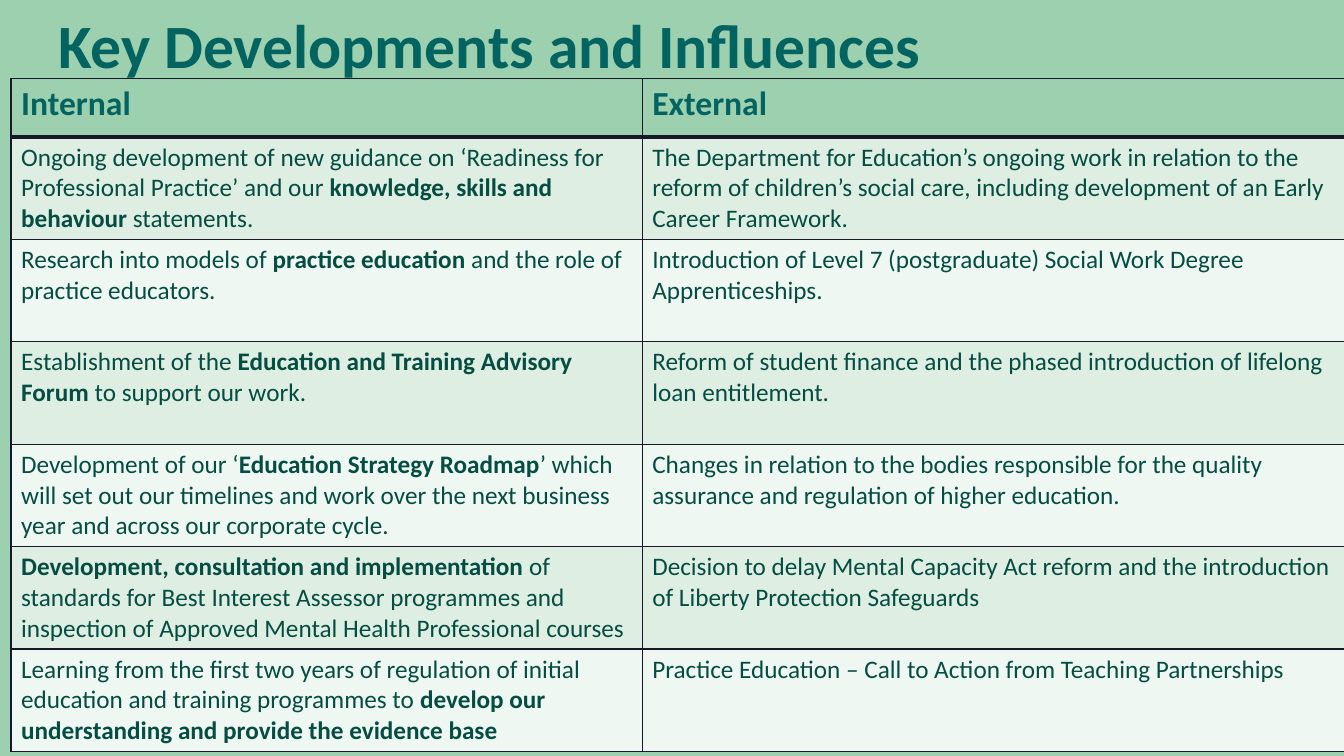
from lxml.etree import SubElement
from pptx import Presentation
from pptx.dml.color import RGBColor
from pptx.oxml.ns import qn
from pptx.util import Inches, Pt

TITLE = "Key Developments and Influences"
# Text between asterisks is bold.
ROWS = [
    ("*Internal*", "*External*"),
    ("Ongoing development of new guidance on ‘Readiness for Professional Practice’ "
     "and our *knowledge, skills and behaviour *statements.",
     "The Department for Education’s ongoing work in relation to the reform of "
     "children’s social care, including development of an Early Career Framework."),
    ("Research into models of *practice education *and the role of practice educators.",
     "Introduction of Level 7 (postgraduate) Social Work Degree Apprenticeships."),
    ("Establishment of the *Education and Training Advisory Forum* to support our work.",
     "Reform of student finance and the phased introduction of lifelong loan entitlement."),
    ("Development of our ‘*Education Strategy Roadmap*’ which will set out our "
     "timelines and work over the next business year and across our corporate cycle.",
     "Changes in relation to the bodies responsible for the quality assurance and "
     "regulation of higher education."),
    ("*Development, consultation and implementation *of standards for Best Interest "
     "Assessor programmes and inspection of Approved Mental Health Professional courses",
     "Decision to delay Mental Capacity Act reform and the introduction of Liberty "
     "Protection Safeguards"),
    ("Learning from the first two years of regulation of initial education and training "
     "programmes to *develop our understanding and provide the evidence base*",
     "Practice Education – Call to Action from Teaching Partnerships"),
]
WIDTHS = (6.26, 6.97)
HEAD, BODY = 0.58, 1.016
GREEN, TEAL, INK, LINE = "9DD0AE", "026461", "044D42", "19182B"
BANDS = ("EFF7F2", "DFEEE3")


def paint(fill, color):
    fill.solid()
    fill.fore_color.rgb = RGBColor.from_string(color)


def write(frame, text, size, color):
    """Fill the first paragraph, switching bold at each asterisk."""
    para = frame.paragraphs[0]
    for i, part in enumerate(text.split("*")):
        if part:
            run = para.add_run()
            run.text = part
            look = {"name": "Calibri", "size": Pt(size), "bold": i % 2 == 1}
            for key, value in look.items():
                setattr(run.font, key, value)
            paint(run.font.fill, color)
    return para


def edge(cell, row):
    """Draw the cell's borders, thick between header and body."""
    props = cell._tc.get_or_add_tcPr()
    thick = {0: "B", 1: "T"}.get(row)
    for side in "LRTB":
        width = Pt(3 if side == thick else 1)
        line = SubElement(props, qn(f"a:ln{side}"), w=str(width))
        solid = SubElement(line, qn("a:solidFill"))
        SubElement(solid, qn("a:srgbClr"), val=LINE)


deck = Presentation()
deck.slide_width, deck.slide_height = Inches(13.33), Inches(7.5)
slide = deck.slides.add_slide(deck.slide_layouts[6])
paint(slide.background.fill, GREEN)

box = slide.shapes.add_textbox(Inches(0.48), Inches(0.1), Inches(11.5), Inches(0.64))
box.text_frame.word_wrap = True
write(box.text_frame, f"*{TITLE}*", 44, TEAL).line_spacing = 0.9

high = HEAD + BODY * (len(ROWS) - 1)
table = slide.shapes.add_table(len(ROWS), len(WIDTHS), Inches(0.11), Inches(0.78),
                               Inches(sum(WIDTHS)), Inches(high)).table
for col, width in zip(table.columns, WIDTHS):
    col.width = Inches(width)
for r, texts in enumerate(ROWS):
    table.rows[r].height = Inches(BODY if r else HEAD)
    for c, text in enumerate(texts):
        cell = table.cell(r, c)
        edge(cell, r)
        paint(cell.fill, BANDS[r % 2] if r else GREEN)
        write(cell.text_frame, text, *((18, INK) if r else (24, TEAL)))

deck.save("out.pptx")
